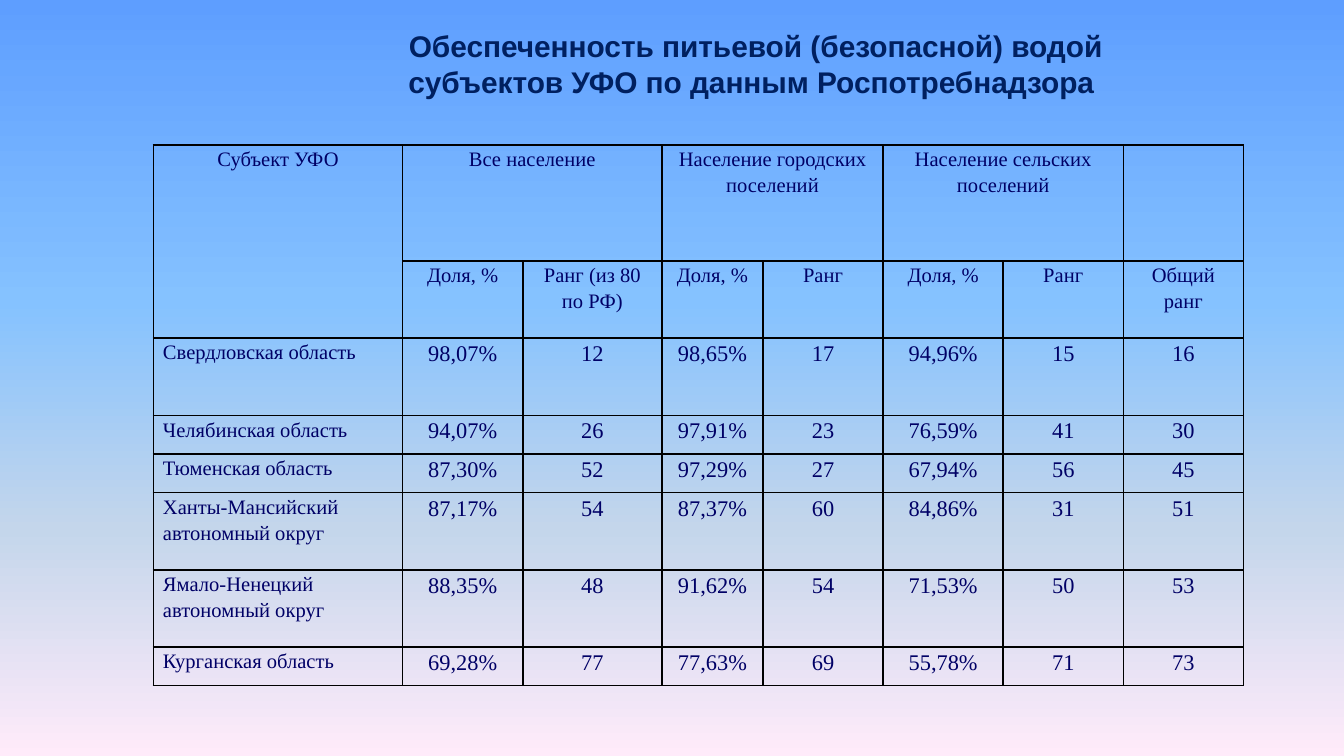
from dataclasses import dataclass

from lxml import etree
from pptx import Presentation
from pptx.dml.color import RGBColor
from pptx.enum import text
from pptx.oxml import ns
from pptx.util import Cm, Pt


@dataclass(frozen=True)
class Theme:
    """Colours, fonts and type sizes of the slide."""
    background: tuple = ((0, "5E9EFF"), (40, "85C2FF"), (70, "C4D6EB"), (100, "FFEBFA"))
    title_color: str = "002060"
    table_color: str = "000066"
    border_color: str = "000000"
    title_font: str = "Arial"
    table_font: str = "Times New Roman"
    title_size: int = 16
    label_size: int = 11
    value_size: int = 12
    border_width: int = 1


THEME = Theme()
TITLE = "Обеспеченность питьевой (безопасной) водой субъектов УФО по данным Роспотребнадзора "
COLUMN_WIDTHS = (4.71, 2.27, 2.63, 1.91, 2.27, 2.27, 2.27, 2.27)
ROW_UNITS = (3, 2, 2, 1, 1, 2, 2, 1)
HEADER_ROWS = 2
ROWS = (
    ("Субъект УФО", "Все население", "", "Население городских поселений", "",
     "Население сельских поселений", "", ""),
    ("", "Доля, %", "Ранг (из 80 по РФ)", "Доля, %", "Ранг", "Доля, %", "Ранг", "Общий ранг"),
    ("Свердловская область", "98,07%", "12", "98,65%", "17", "94,96%", "15", "16"),
    ("Челябинская область", "94,07%", "26", "97,91%", "23", "76,59%", "41", "30"),
    ("Тюменская область", "87,30%", "52", "97,29%", "27", "67,94%", "56", "45"),
    ("Ханты-Мансийский автономный округ", "87,17%", "54", "87,37%", "60", "84,86%", "31", "51"),
    ("Ямало-Ненецкий автономный округ", "88,35%", "48", "91,62%", "54", "71,53%", "50", "53"),
    ("Курганская область", "69,28%", "77", "77,63%", "69", "55,78%", "71", "73"),
)


def style_paragraph(paragraph, font_name, size, color, alignment, bold=False):
    """Align a paragraph and format its runs."""
    paragraph.alignment = alignment
    for run in paragraph.runs:
        run.font.name = font_name
        run.font.size = Pt(size)
        run.font.bold = bold
        run.font.color.rgb = RGBColor.from_string(color)


def paint_background(slide):
    """Fill the slide with the vertical theme gradient."""
    fill = slide.background.fill
    fill.gradient()
    fill.gradient_angle = 270
    stops = slide.element.find(".//" + ns.qn("a:gsLst"))
    for stop in list(stops):
        stops.remove(stop)
    for position, color in THEME.background:
        stop = etree.SubElement(stops, ns.qn("a:gs"), pos=str(position * 1000))
        etree.SubElement(stop, ns.qn("a:srgbClr"), val=color)


def add_title(slide, left, top, width, height):
    """Place the right-aligned title in the given box."""
    title = slide.shapes.title
    title.left, title.top, title.width, title.height = left, top, width, height
    frame = title.text_frame
    frame.text = TITLE
    frame.word_wrap = True
    frame.auto_size = text.MSO_AUTO_SIZE.NONE
    frame.vertical_anchor = text.MSO_ANCHOR.MIDDLE
    style_paragraph(frame.paragraphs[0], THEME.title_font, THEME.title_size,
                    THEME.title_color, text.PP_ALIGN.RIGHT, bold=True)


def add_borders(cell):
    """Draw a thin line on each side of a cell."""
    properties = cell._tc.get_or_add_tcPr()
    for side in ("lnL", "lnR", "lnT", "lnB"):
        line = etree.SubElement(properties, ns.qn("a:" + side), w=str(Pt(THEME.border_width)))
        fill = etree.SubElement(line, ns.qn("a:solidFill"))
        etree.SubElement(fill, ns.qn("a:srgbClr"), val=THEME.border_color)


def fill_cell(cell, content, is_header, is_label):
    """Write and format one transparent, bordered cell."""
    add_borders(cell)
    cell.fill.background()
    cell.margin_left = cell.margin_right = Cm(0.18)
    cell.margin_top = cell.margin_bottom = 0
    if not content:
        return
    cell.text_frame.text = content
    paragraph = cell.text_frame.paragraphs[0]
    paragraph.line_spacing = 1.15
    size = THEME.label_size if is_header or is_label else THEME.value_size
    centred = is_header or not is_label
    alignment = text.PP_ALIGN.CENTER if centred else text.PP_ALIGN.LEFT
    style_paragraph(paragraph, THEME.table_font, size, THEME.table_color, alignment)


def add_water_table(slide, left, top, width, height):
    """Place the table of shares and ranks in the given box."""
    shape = slide.shapes.add_table(len(ROWS), len(COLUMN_WIDTHS), left, top, width, height)
    table = shape.table
    table.first_row = table.horz_banding = False
    for column, share in zip(table.columns, COLUMN_WIDTHS):
        column.width = int(width * share / sum(COLUMN_WIDTHS))
    for row, units in zip(table.rows, ROW_UNITS):
        row.height = int(height * units / sum(ROW_UNITS))
    for row_index, row in enumerate(ROWS):
        for column_index, content in enumerate(row):
            fill_cell(table.cell(row_index, column_index), content,
                      row_index < HEADER_ROWS, column_index == 0)
    table.cell(0, 0).merge(table.cell(1, 0))
    for first in (1, 3, 5):
        table.cell(0, first).merge(table.cell(0, first + 1))


def main():
    """Build and save the presentation."""
    presentation = Presentation()
    presentation.slide_width, presentation.slide_height = Cm(25.4), Cm(14.29)
    slide = presentation.slides.add_slide(presentation.slide_layouts[5])
    paint_background(slide)
    add_water_table(slide, Cm(2.9), Cm(2.74), Cm(20.6), Cm(10.22))
    add_title(slide, Cm(6.1), Cm(0.53), Cm(15), Cm(1.35))
    presentation.save("out.pptx")


if __name__ == "__main__":
    main()
